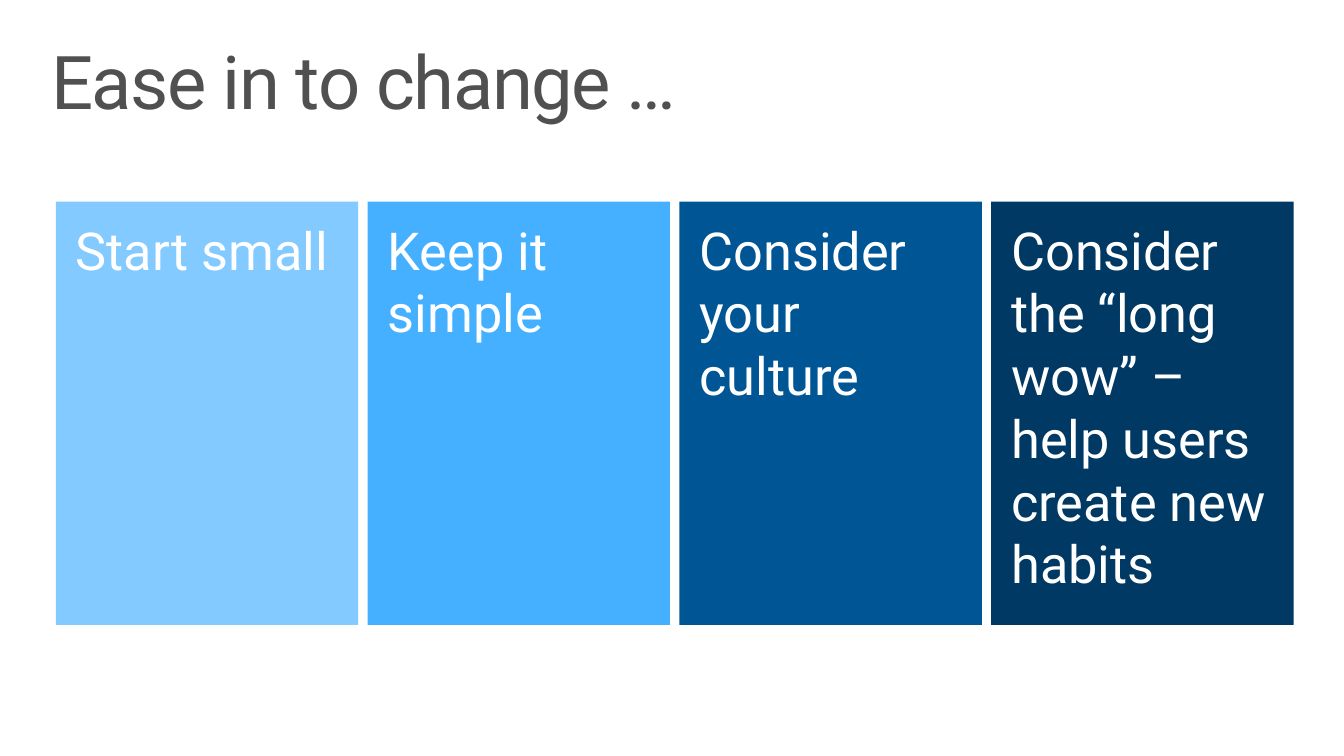
from typing import NamedTuple

from pptx import Presentation
from pptx import util as u
from pptx.dml.color import RGBColor
from pptx.enum import shapes, text

SCALE = 4572  # EMU per px, 200 px to the inch
FONT = "Roboto"

WHITE = RGBColor(0xFF, 0xFF, 0xFF)
GREY = RGBColor(0x50, 0x50, 0x50)
SKY = RGBColor(0x82, 0xCA, 0xFF)
AZURE = RGBColor(0x44, 0xB0, 0xFF)
BLUE = RGBColor(0x00, 0x56, 0x94)
NAVY = RGBColor(0x00, 0x39, 0x63)

TILE_LEFT, TILE_TOP = 83, 300
TILE_WIDTH, TILE_HEIGHT, TILE_GAP = 450, 630, 14


class Tile(NamedTuple):
    caption: str
    fill: RGBColor


TILES = [
    Tile("Start small", SKY),
    Tile("Keep it simple", AZURE),
    Tile("Consider your culture", BLUE),
    Tile("Consider the “long wow” – help users create new habits", NAVY),
]


def px(length: int) -> u.Emu:
    return u.Emu(length * SCALE)


def write(box, words: str, *, size: float, color: RGBColor, inset_x: int,
          inset_y: int, line_spacing: float = 1.0, tracking: int = 0) -> None:
    """Put one left-aligned paragraph at the top of a box."""
    frame = box.text_frame
    frame.word_wrap = True
    frame.auto_size = text.MSO_AUTO_SIZE.NONE
    frame.vertical_anchor = text.MSO_ANCHOR.TOP
    frame.margin_left = frame.margin_right = px(inset_x)
    frame.margin_top = frame.margin_bottom = px(inset_y)
    para = frame.paragraphs[0]
    para.alignment = text.PP_ALIGN.LEFT
    para.line_spacing = line_spacing
    span = para.add_run()
    span.text = words
    span.font.name = FONT
    span.font.size = u.Pt(size)
    span.font.color.rgb = color
    if tracking:  # hundredths of a point
        span._r.get_or_add_rPr().set("spc", str(tracking))


def draw_tile(page, tile: Tile, left: int) -> None:
    box = page.shapes.add_shape(shapes.MSO_SHAPE.RECTANGLE, px(left), px(TILE_TOP),
                                px(TILE_WIDTH), px(TILE_HEIGHT))
    box.shadow.inherit = False
    box.fill.solid()
    box.fill.fore_color.rgb = tile.fill
    box.line.fill.background()
    write(box, tile.caption, size=28, color=WHITE, inset_x=30, inset_y=24)


def main() -> None:
    deck = Presentation()
    deck.slide_width, deck.slide_height = px(2000), px(1125)
    page = deck.slides.add_slide(deck.slide_layouts[5])
    page.background.fill.solid()
    page.background.fill.fore_color.rgb = WHITE

    # Title
    title = page.shapes.title
    title.left, title.top, title.width, title.height = map(px, (44, 48, 1912, 148))
    write(title, "Ease in to change …", size=39.7, color=GREY, inset_x=32,
          inset_y=20, line_spacing=0.9, tracking=-75)

    # Row of tiles
    for index, tile in enumerate(TILES):
        draw_tile(page, tile, TILE_LEFT + index * (TILE_WIDTH + TILE_GAP))

    deck.save("out.pptx")


if __name__ == "__main__":
    main()
